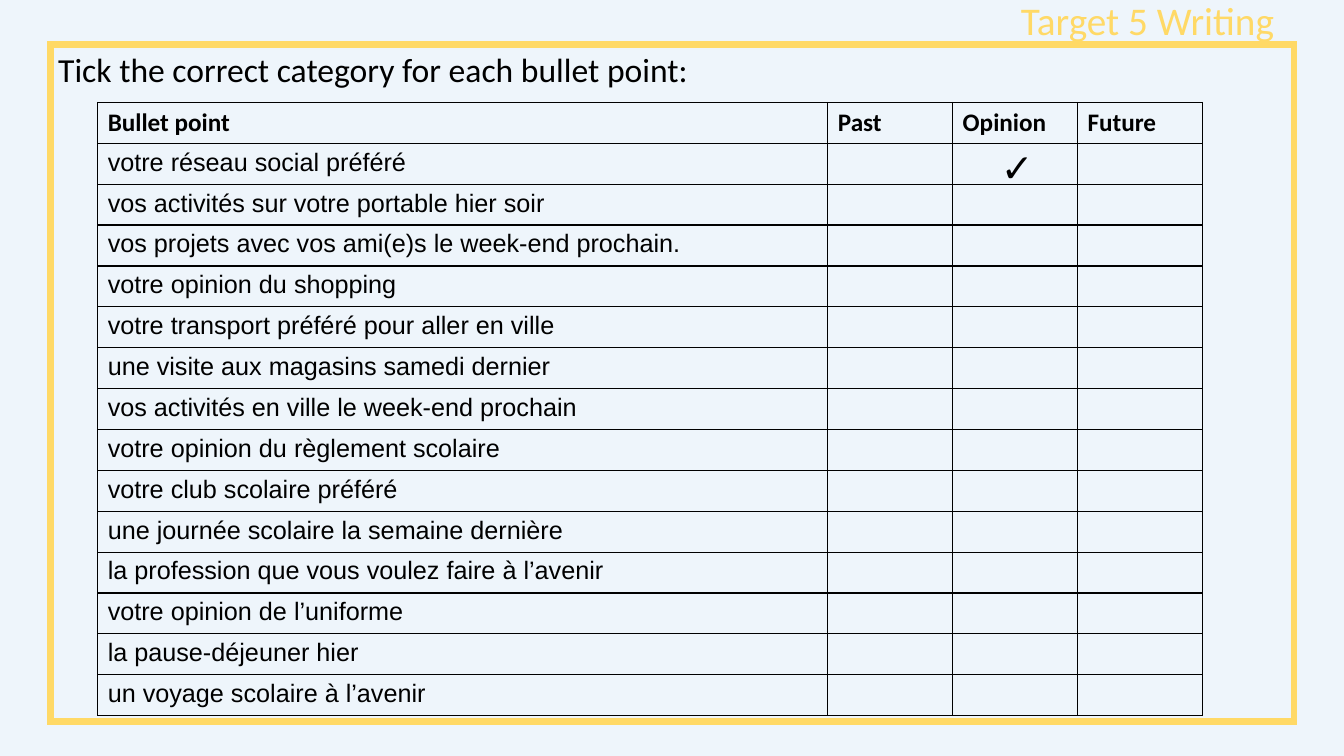
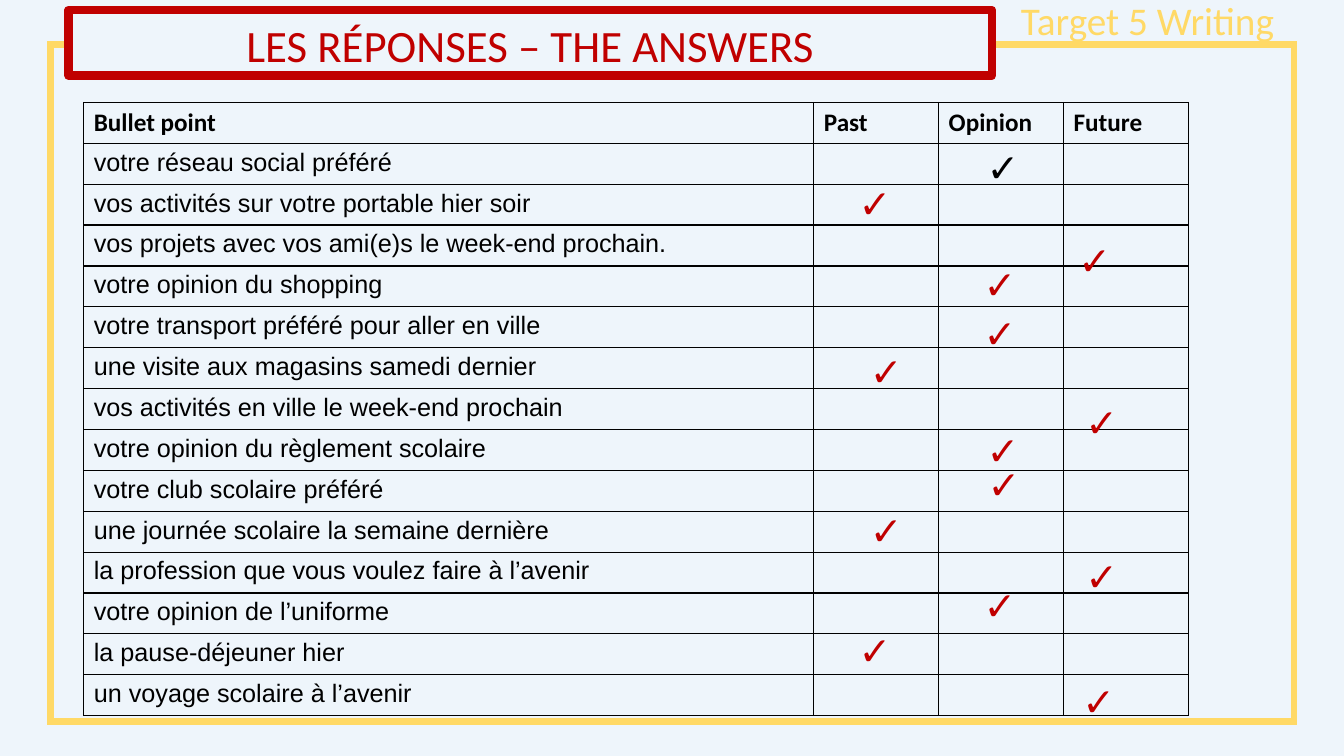
from lxml import etree
from pptx import Presentation
from pptx.dml.color import RGBColor
from pptx.enum.shapes import MSO_SHAPE
from pptx.enum.text import MSO_ANCHOR, PP_ALIGN
from pptx.oxml.ns import qn
from pptx.util import Pt

RECTANGLE = MSO_SHAPE.RECTANGLE
MIDDLE = MSO_ANCHOR.MIDDLE
CENTER = PP_ALIGN.CENTER

COLORS = {
    "background": "EEF5FB",
    "gold": "FFD966",
    "red": "C00000",
    "black": "000000",
}
HEADINGS = ["Bullet point", "Past", "Opinion", "Future"]
BULLET_POINTS = [
    "votre réseau social préféré",
    "vos activités sur votre portable hier soir",
    "vos projets avec vos ami(e)s le week-end prochain.",
    "votre opinion du shopping",
    "votre transport préféré pour aller en ville",
    "une visite aux magasins samedi dernier",
    "vos activités en ville le week-end prochain",
    "votre opinion du règlement scolaire",
    "votre club scolaire préféré",
    "une journée scolaire la semaine dernière",
    "la profession que vous voulez faire à l’avenir",
    "votre opinion de l’uniforme",
    "la pause-déjeuner hier",
    "un voyage scolaire à l’avenir",
]
ANSWER_TICKS = [
    (606.2, 124.6), (763.2, 165.6), (695.5, 182.2), (695.5, 217.4),
    (614.2, 244.8), (768.2, 280.8), (697.7, 301), (698.4, 325.4),
    (614.2, 357.8), (768.2, 391), (695.5, 411.8), (606.2, 443.5),
    (766.1, 480.2),
]
COLUMN_WIDTHS = [521.5, 89.2, 89.2, 89.2]
ROW_HEIGHT = 29.2
TABLE_TOP = 73.2


class Deck:
    def __init__(self):
        self.presentation = Presentation()
        self.presentation.slide_width = Pt(960)
        self.presentation.slide_height = Pt(540)
        self.slide = None

    def color(self, name):
        return RGBColor.from_string(COLORS[name])

    def style(self, paragraph, size, color="black", bold=False, font="Calibri"):
        paragraph.font.name = font
        paragraph.font.size = Pt(size)
        paragraph.font.bold = bold
        paragraph.font.color.rgb = self.color(color)

    def add_slide(self):
        self.slide = self.presentation.slides.add_slide(self.presentation.slide_layouts[6])
        fill = self.slide.background.fill
        fill.solid()
        fill.fore_color.rgb = self.color("background")

    def add_text(self, text, left, top, width, height, size, color="black", bold=False, wrap=True):
        box = self.slide.shapes.add_textbox(Pt(left), Pt(top), Pt(width), Pt(height))
        box.text_frame.word_wrap = wrap
        paragraph = box.text_frame.paragraphs[0]
        paragraph.text = text
        self.style(paragraph, size, color, bold)

    def add_rectangle(self, left, top, width, height, color, weight, join, fill=None):
        shape = self.slide.shapes.add_shape(RECTANGLE, Pt(left), Pt(top), Pt(width), Pt(height))
        shape.shadow.inherit = False
        if fill:
            shape.fill.solid()
            shape.fill.fore_color.rgb = self.color(fill)
        else:
            shape.fill.background()
        shape.line.color.rgb = self.color(color)
        shape.line.width = Pt(weight)
        etree.SubElement(shape.line._get_or_add_ln(), qn(f"a:{join}"))
        return shape

    def add_frame(self):
        self.add_text("Target 5 Writing", 722.2, -5.8, 197.3, 41, 28, "gold", wrap=False)
        self.add_rectangle(36, 31.7, 888.5, 483.8, "gold", 4.5, "miter")

    def add_banner(self, text):
        banner = self.add_rectangle(49, 7.2, 659.5, 46.8, "red", 6, "round", "background")
        banner.text_frame.word_wrap = True
        banner.text_frame.vertical_anchor = MIDDLE
        paragraph = banner.text_frame.paragraphs[0]
        paragraph.text = text
        paragraph.alignment = CENTER
        paragraph.line_spacing = 1.07
        paragraph.space_after = Pt(8)
        self.style(paragraph, 32, "red")

    def add_tick(self, left, top, color="black"):
        self.add_text("✓", left, top, 94.3, 41, 28, color, bold=True)

    def add_borders(self, cell):
        properties = cell._tc.get_or_add_tcPr()
        for side in "LRTB":
            line = etree.SubElement(properties, qn(f"a:ln{side}"), w=str(Pt(1)))
            fill = etree.SubElement(line, qn("a:solidFill"))
            etree.SubElement(fill, qn("a:srgbClr"), val=COLORS["black"])

    def add_category_table(self, left):
        rows = [HEADINGS] + [[point, "", "", ""] for point in BULLET_POINTS]
        table = self.slide.shapes.add_table(
            len(rows), len(HEADINGS), Pt(left), Pt(TABLE_TOP),
            Pt(sum(COLUMN_WIDTHS)), Pt(ROW_HEIGHT * len(rows))).table
        table.first_row = False
        table.horz_banding = False
        for column, width in zip(table.columns, COLUMN_WIDTHS):
            column.width = Pt(width)
        for row_index, texts in enumerate(rows):
            table.rows[row_index].height = Pt(ROW_HEIGHT)
            heading = row_index == 0
            for column_index, text in enumerate(texts):
                cell = table.cell(row_index, column_index)
                self.add_borders(cell)
                cell.fill.background()
                paragraph = cell.text_frame.paragraphs[0]
                if text:
                    paragraph.text = text
                self.style(paragraph, 18, bold=heading, font="Calibri" if heading else "Arial")


def main():
    deck = Deck()

    deck.add_slide()
    deck.add_category_table(69.8)
    deck.add_frame()
    deck.add_text("Tick the correct category for each bullet point:", 34.5, 31.7, 844.5, 36, 24)
    deck.add_tick(707.8, 98.6)

    deck.add_slide()
    deck.add_category_table(59.8)
    deck.add_frame()
    deck.add_tick(697.7, 98.6)
    for left, top in ANSWER_TICKS:
        deck.add_tick(left, top, "red")
    deck.add_banner("LES RÉPONSES – THE ANSWERS")

    deck.presentation.save("out.pptx")


if __name__ == "__main__":
    main()
